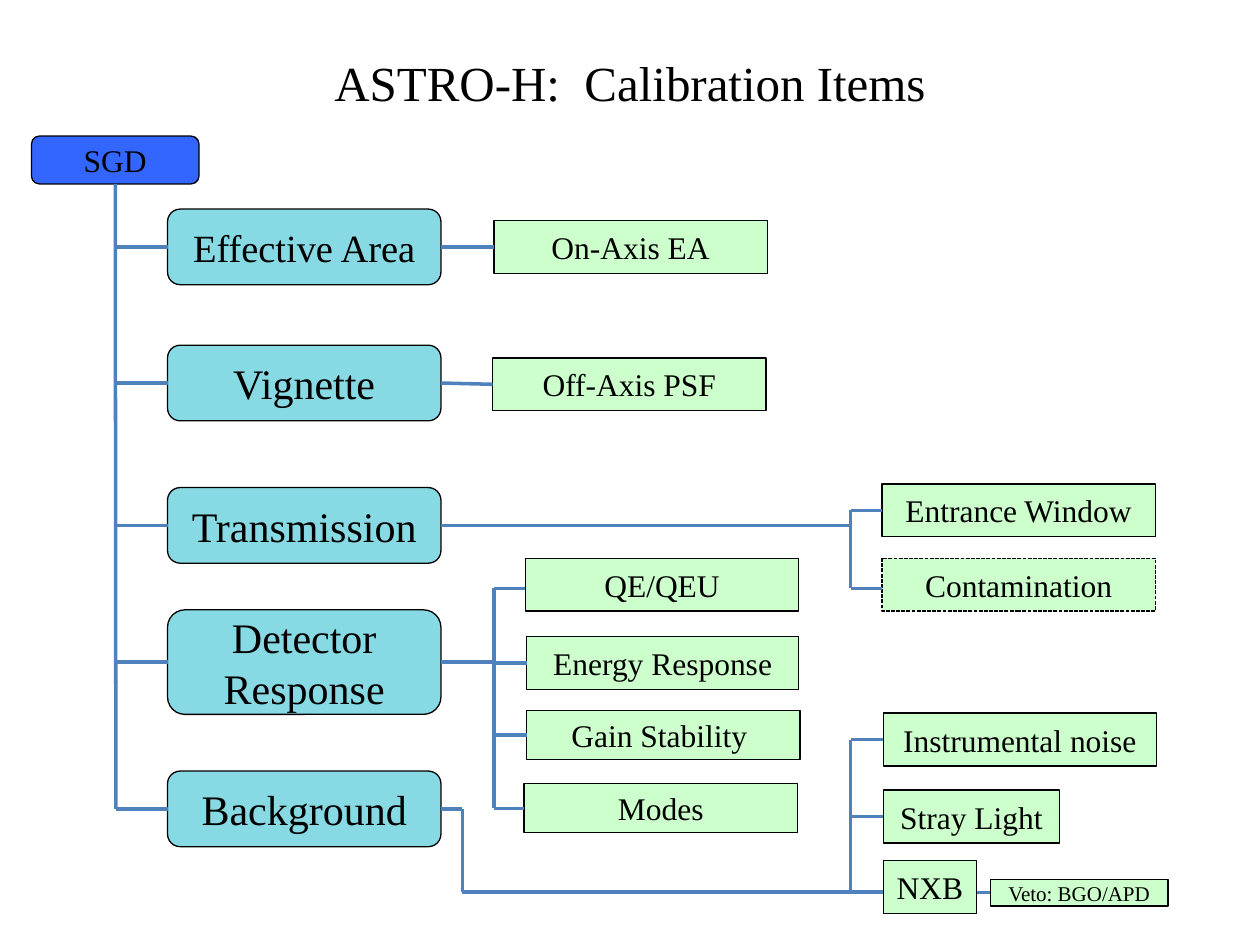
from lxml.etree import SubElement
from pptx import Presentation
from pptx.dml.color import RGBColor
from pptx.enum.dml import MSO_LINE
from pptx.enum.shapes import MSO_CONNECTOR, MSO_SHAPE
from pptx.enum.text import MSO_ANCHOR, PP_ALIGN
from pptx.oxml.ns import qn
from pptx.util import Inches, Pt

BLACK = RGBColor(0x00, 0x00, 0x00)
ROYAL = RGBColor(0x33, 0x66, 0xFF)
AQUA = RGBColor(0x87, 0xD9, 0xE3)
MINT = RGBColor(0xCC, 0xFF, 0xCC)
STEEL = RGBColor(0x4F, 0x81, 0xBD)
FONT = "Times New Roman"
BOTTOM, LEFT, RIGHT = 2, 1, 3

# Content: label, left, top, width, height, text size
TITLE = "ASTRO-H:  Calibration Items"
INSTRUMENT = [("SGD", 0.25, 1.08, 1.33, 0.38, 18)]
CATEGORIES = [
    ("Effective Area", 1.33, 1.66, 2.17, 0.6, 22),
    ("Vignette", 1.33, 2.74, 2.17, 0.6, 24),
    ("Transmission", 1.33, 3.87, 2.17, 0.6, 24),
    ("Detector Response", 1.33, 4.84, 2.17, 0.83, 24),
    ("Background", 1.33, 6.12, 2.17, 0.6, 24),
]
ITEMS = [
    ("On-Axis EA", 3.92, 1.75, 2.17, 0.42, 18),
    ("Off-Axis PSF", 3.91, 2.84, 2.17, 0.42, 18),
    ("Entrance Window", 7, 3.84, 2.17, 0.42, 18),
    ("Contamination", 7, 4.43, 2.17, 0.42, 18),
    ("QE/QEU", 4.17, 4.43, 2.17, 0.42, 18),
    ("Energy Response", 4.18, 5.05, 2.16, 0.42, 18),
    ("Gain Stability ", 4.18, 5.64, 2.17, 0.39, 18),
    ("Modes", 4.16, 6.22, 2.17, 0.39, 18),
    ("Instrumental noise", 7.01, 5.66, 2.17, 0.42, 18),
    ("Stray Light", 7.01, 6.27, 1.4, 0.42, 18),
    ("NXB", 7.01, 6.83, 0.74, 0.42, 18),
    ("Veto: BGO/APD", 7.86, 6.98, 1.41, 0.21, 12),
]
DASHED = "Contamination"

# Trunk x position and the boxes that branch from it
TRUNKS = [
    (0.92, [category[0] for category in CATEGORIES]),
    (6.75, ["Entrance Window", "Contamination"]),
    (3.92, ["QE/QEU", "Energy Response", "Gain Stability ", "Modes"]),
    (6.75, ["Instrumental noise", "Stray Light", "NXB"]),
]
DIRECT = [("Effective Area", "On-Axis EA"), ("Vignette", "Off-Axis PSF")]
FEEDS = [("Transmission", 6.75), ("Detector Response", 3.92), ("Background", 3.67)]
# Branches that meet their box off its middle
BRANCH_Y = {"QE/QEU": 4.67, "Contamination": 4.67, "NXB": 7.08}

prs = Presentation()
prs.slide_width, prs.slide_height = Inches(10), Inches(7.5)
slide = prs.slides.add_slide(prs.slide_layouts[5])
boxes, middle_y = {}, {}


def write(shape, text, size):
    frame = shape.text_frame
    settings = {"word_wrap": True, "vertical_anchor": MSO_ANCHOR.MIDDLE,
                "margin_left": Inches(0.05), "margin_right": Inches(0.05),
                "margin_top": 0, "margin_bottom": 0}
    for name, value in settings.items():
        setattr(frame, name, value)
    frame.text = text
    paragraph = frame.paragraphs[0]
    paragraph.alignment = PP_ALIGN.CENTER
    font = paragraph.runs[0].font
    for name, value in {"name": FONT, "size": Pt(size)}.items():
        setattr(font, name, value)
    font.color.rgb = BLACK


def add_box(preset, fill, label, left, top, width, height, size):
    box = slide.shapes.add_shape(preset, *map(Inches, (left, top, width, height)))
    box.shadow.inherit = False
    box.fill.solid()
    box.fill.fore_color.rgb = fill
    box.line.color.rgb = BLACK
    box.line.width = Pt(0.75)
    if label == DASHED:
        box.line.dash_style = MSO_LINE.SQUARE_DOT
    write(box, label, size)
    boxes[label] = box
    middle_y[label] = top + height / 2


def add_line(x1, y1, x2, y2, begin=None, end=None):
    line = slide.shapes.add_connector(
        MSO_CONNECTOR.STRAIGHT, *map(Inches, (x1, y1, x2, y2)))
    line.line.color.rgb = STEEL
    line.line.width = Pt(2)
    SubElement(line._element.spPr, qn("a:effectLst"))
    if begin:
        line.begin_connect(boxes[begin[0]], begin[1])
    if end:
        line.end_connect(boxes[end[0]], end[1])


# Title
title = slide.shapes.title
for name, value in {"left": 0.5, "top": 0.3, "width": 9, "height": 0.7}.items():
    setattr(title, name, Inches(value))
write(title, TITLE, 28)

# Boxes
for preset, fill, group in (
    (MSO_SHAPE.FLOWCHART_ALTERNATE_PROCESS, ROYAL, INSTRUMENT),
    (MSO_SHAPE.FLOWCHART_ALTERNATE_PROCESS, AQUA, CATEGORIES),
    (MSO_SHAPE.RECTANGLE, MINT, ITEMS),
):
    for row in group:
        add_box(preset, fill, *row)

# Trunks with their branches
for trunk_x, labels in TRUNKS:
    levels = [BRANCH_Y.get(label, middle_y[label]) for label in labels]
    if trunk_x == 0.92:
        add_line(trunk_x, 1.46, trunk_x, levels[-1], begin=("SGD", BOTTOM))
    else:
        add_line(trunk_x, levels[0], trunk_x, levels[-1])
    for label, y in zip(labels, levels):
        box_left = boxes[label].left / Inches(1)
        joined = None if label in BRANCH_Y else (label, LEFT)
        add_line(trunk_x, y, box_left, y, end=joined)

# Links from the categories to items and trunks
for category, item in DIRECT:
    y = middle_y[category]
    add_line(3.5, y, 3.91, y, (category, RIGHT), (item, LEFT))
for category, trunk_x in FEEDS:
    y = middle_y[category]
    add_line(3.5, y, trunk_x, y, begin=(category, RIGHT))

# Background detour and veto link
add_line(3.67, middle_y["Background"], 3.67, BRANCH_Y["NXB"])
add_line(3.67, BRANCH_Y["NXB"], 6.75, BRANCH_Y["NXB"])
add_line(7.75, middle_y["Veto: BGO/APD"], 7.86, middle_y["Veto: BGO/APD"],
         end=("Veto: BGO/APD", LEFT))

prs.save("out.pptx")
